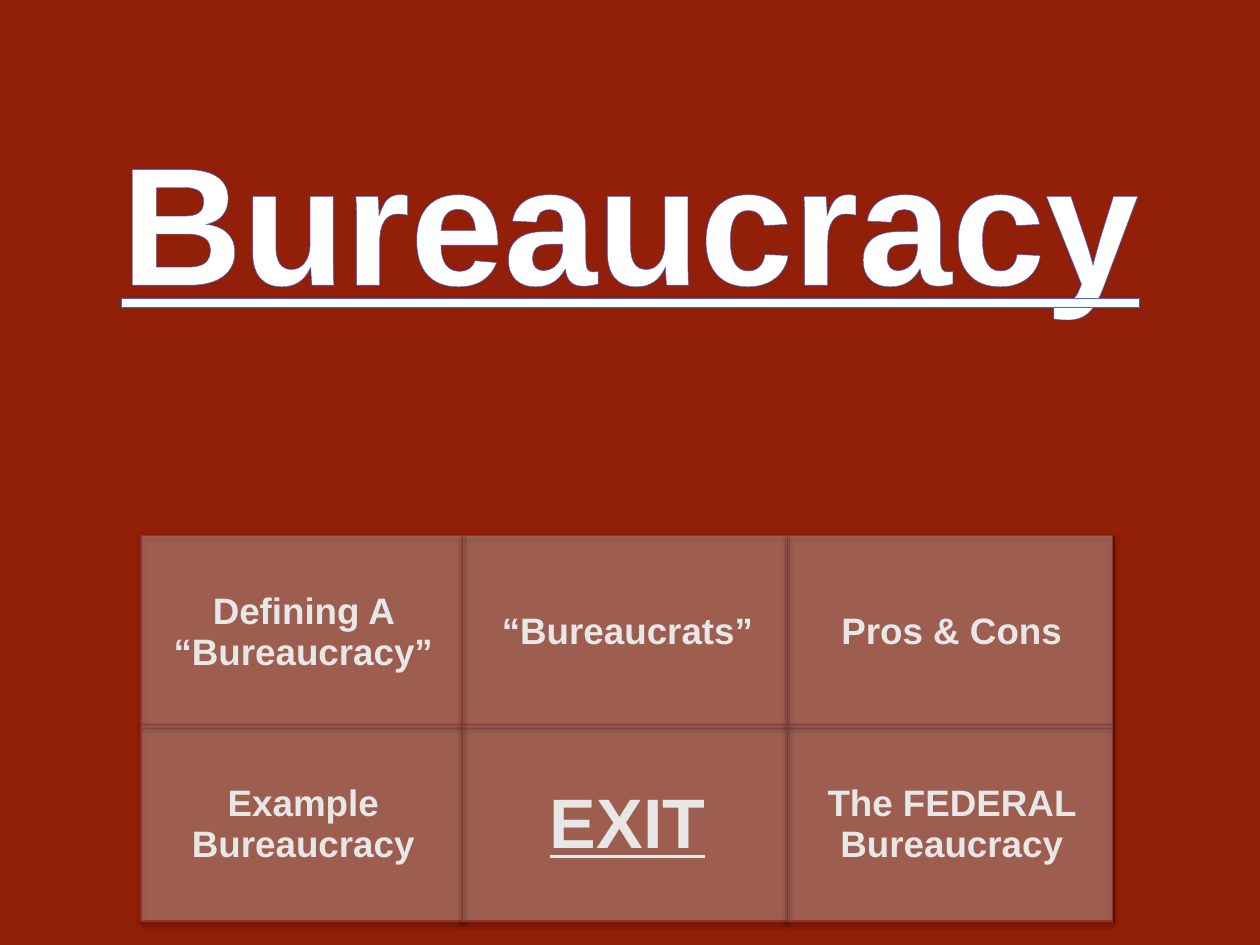
import pptx
import pptx.dml.color
import pptx.enum.shapes
import pptx.enum.text
import pptx.oxml
import pptx.oxml.ns
import pptx.util

Inches = pptx.util.Inches
Pt = pptx.util.Pt
RGBColor = pptx.dml.color.RGBColor

BACKGROUND = RGBColor(0x92, 0x1F, 0x07)
WHITE = RGBColor(0xFF, 0xFF, 0xFF)
BLACK = RGBColor(0x00, 0x00, 0x00)
TITLE_OUTLINE = RGBColor(0x33, 0x66, 0xFF)
CELL_GREY = RGBColor(0x80, 0x80, 0x80)
CELL_BORDER = RGBColor(0x6D, 0x17, 0x05)
BUTTON_LINE = RGBColor(0x98, 0x2E, 0x2E)

TOPICS = [
    ["Defining A “Bureaucracy”", "“Bureaucrats”", "Pros & Cons"],
    ["Example Bureaucracy", "EXIT", "The FEDERAL Bureaucracy"],
]
GRID_LEFT, GRID_TOP = 1.12, 4.25
GRID_WIDTH, GRID_HEIGHT = 7.72, 3.06
BUTTON_COLUMNS = [(1.12, 2.55), (3.67, 2.58), (6.25, 2.58)]
BUTTON_ROWS = [(4.25, 1.5), (5.75, 1.56)]


def color_xml(color, opacity=100):
    return f'<a:srgbClr val="{color}"><a:alpha val="{opacity * 1000}"/></a:srgbClr>'


def line_xml(tag, color, width):
    return pptx.oxml.parse_xml(
        f'<a:{tag} {pptx.oxml.ns.nsdecls("a")} w="{Pt(width)}">'
        f"<a:solidFill>{color_xml(color)}</a:solidFill></a:{tag}>"
    )


def set_fill(fill, color, opacity):
    fill.solid()
    fill.fore_color.rgb = color
    alpha = pptx.oxml.parse_xml(
        f'<a:alpha {pptx.oxml.ns.nsdecls("a")} val="{opacity * 1000}"/>'
    )
    fill._xPr.find(".//" + pptx.oxml.ns.qn("a:srgbClr")).append(alpha)


def write_text(text_frame, text, size, underline=False, outline=None):
    paragraph = text_frame.paragraphs[0]
    paragraph.alignment = pptx.enum.text.PP_ALIGN.CENTER
    run = paragraph.add_run()
    run.text = text
    run.font.name = "Arial"
    run.font.size = Pt(size)
    run.font.bold = True
    run.font.underline = underline
    run.font.color.rgb = WHITE
    if outline is not None:
        run._r.get_or_add_rPr().insert(0, line_xml("ln", outline, 0.75))


def add_title(slide):
    title = slide.shapes.title
    title.left, title.top = Inches(0.75), Inches(0.75)
    title.width, title.height = Inches(8.5), Inches(1.83)
    text_frame = title.text_frame
    text_frame.auto_size = pptx.enum.text.MSO_AUTO_SIZE.NONE
    text_frame.vertical_anchor = pptx.enum.text.MSO_ANCHOR.BOTTOM
    write_text(text_frame, "Bureaucracy", 96, underline=True, outline=TITLE_OUTLINE)


def format_cell(cell):
    cell.vertical_anchor = pptx.enum.text.MSO_ANCHOR.MIDDLE
    cell.margin_left = cell.margin_right = Inches(0.12)
    cell.margin_top = cell.margin_bottom = Inches(0.06)
    set_fill(cell.fill, CELL_GREY, 15)
    properties = cell._tc.get_or_add_tcPr()
    for index, side in enumerate(["lnL", "lnR", "lnT", "lnB"]):
        properties.insert(index, line_xml(side, CELL_BORDER, 1))


def add_topic_table(slide):
    frame = slide.shapes.add_table(
        len(TOPICS), len(TOPICS[0]), Inches(GRID_LEFT), Inches(GRID_TOP),
        Inches(GRID_WIDTH), Inches(GRID_HEIGHT),
    )
    table = frame.table
    table.first_row = table.horz_banding = False
    for row_index, topics in enumerate(TOPICS):
        for column_index, topic in enumerate(topics):
            cell = table.cell(row_index, column_index)
            format_cell(cell)
            is_exit = topic == "EXIT"
            write_text(cell.text_frame, topic, 40 if is_exit else 21, underline=is_exit)


def add_button(slide, left, top, width, height):
    button = slide.shapes.add_shape(
        pptx.enum.shapes.MSO_SHAPE.ACTION_BUTTON_CUSTOM,
        Inches(left), Inches(top), Inches(width), Inches(height),
    )
    set_fill(button.fill, WHITE, 25)
    button.line.color.rgb = BUTTON_LINE
    button.line.width = Pt(1)
    button.shadow.inherit = False
    shadow = pptx.oxml.parse_xml(
        f'<a:outerShdw {pptx.oxml.ns.nsdecls("a")} blurRad="{Pt(3)}" dist="{Pt(2)}" '
        f'dir="5400000" rotWithShape="0">{color_xml(BLACK, 50)}</a:outerShdw>'
    )
    button._element.spPr.find(pptx.oxml.ns.qn("a:effectLst")).append(shadow)


def main():
    presentation = pptx.Presentation()
    presentation.slide_width = Inches(10)
    presentation.slide_height = Inches(7.5)
    slide = presentation.slides.add_slide(presentation.slide_layouts[5])
    slide.background.fill.solid()
    slide.background.fill.fore_color.rgb = BACKGROUND
    add_title(slide)
    add_topic_table(slide)
    for top, height in BUTTON_ROWS:
        for left, width in BUTTON_COLUMNS:
            add_button(slide, left, top, width, height)
    presentation.save("out.pptx")


if __name__ == "__main__":
    main()
